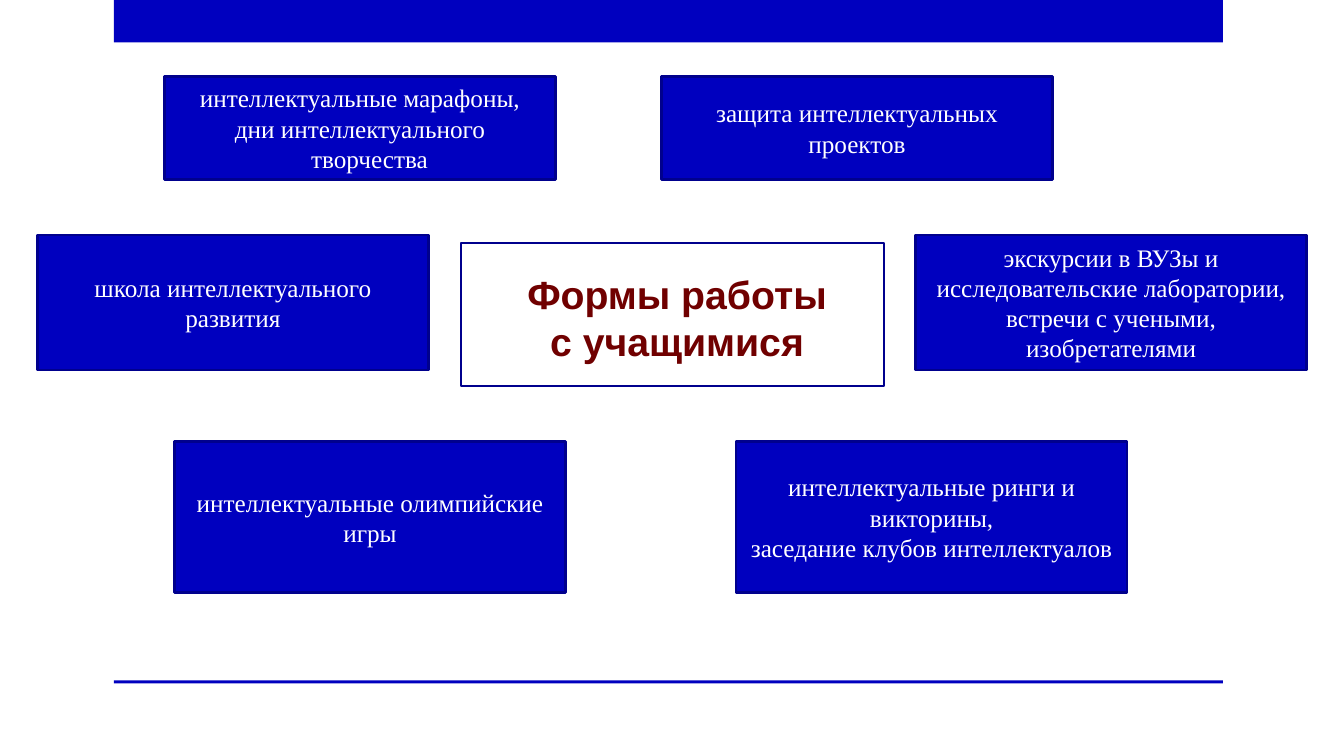
from pptx import Presentation
from pptx import util as u
from pptx.dml.color import RGBColor
from pptx.enum import shapes, text

BLUE, NAVY, WHITE, MAROON = "0000BF", "00008D", "FFFFFF", "700000"


def color(value):
    return RGBColor.from_string(value)


def write(tf, lines, size=18, font="Times New Roman", fill=WHITE, bold=False,
          anchor=text.MSO_ANCHOR.MIDDLE):
    tf.word_wrap = True
    tf.auto_size = text.MSO_AUTO_SIZE.NONE
    tf.vertical_anchor = anchor
    tf.margin_left = tf.margin_right = u.Inches(0.1)
    tf.margin_top = tf.margin_bottom = u.Inches(0.05)
    for i, line in enumerate(lines):
        p = tf.paragraphs[0] if i == 0 else tf.add_paragraph()
        p.text = line
        p.alignment = text.PP_ALIGN.CENTER
        for r in p.runs:
            r.font.size = u.Pt(size)
            r.font.name = font
            r.font.bold = bold
            r.font.color.rgb = color(fill)


prs = Presentation()
prs.slide_width, prs.slide_height = u.Inches(13.33), u.Inches(7.5)
s = prs.slides.add_slide(prs.slide_layouts[5])

boxes = [
    (1.13, 0, 11, 0.42, BLUE, None, []),
    (1.13, 6.75, 11, 0.03, BLUE, None, []),
    (4.57, 2.41, 4.2, 1.42, None, NAVY, []),
    (1.63, 0.76, 3.88, 1.02, BLUE, NAVY,
     ["интеллектуальные марафоны,", "дни интеллектуального\vтворчества"]),
    (1.73, 4.38, 3.88, 1.5, BLUE, NAVY, ["интеллектуальные олимпийские игры"]),
    (0.37, 2.33, 3.88, 1.34, BLUE, NAVY, ["школа интеллектуального развития"]),
    (9.08, 2.33, 3.88, 1.34, BLUE, NAVY,
     ["экскурсии в ВУЗы и исследовательские лаборатории,",
      "встречи с учеными, изобретателями"]),
    (6.56, 0.76, 3.88, 1.02, BLUE, NAVY, ["защита интеллектуальных проектов"]),
    (7.3, 4.38, 3.88, 1.5, BLUE, NAVY,
     ["интеллектуальные ринги и викторины,", "заседание клубов интеллектуалов"]),
]
for x, y, w, h, fill, line, lines in boxes:
    sp = s.shapes.add_shape(shapes.MSO_SHAPE.RECTANGLE, *map(u.Inches, (x, y, w, h)))
    sp.shadow.inherit = False
    if fill:
        sp.fill.solid()
        sp.fill.fore_color.rgb = color(fill)
    else:
        sp.fill.background()
    if line:
        sp.line.color.rgb = color(line)
        sp.line.width = u.Pt(1.75)
    else:
        sp.line.fill.background()
    write(sp.text_frame, lines)
    if "\v" in "".join(lines):
        pPr = sp.text_frame.paragraphs[1]._p.get_or_add_pPr()
        pPr.set("marL", str(u.Inches(0.19)))
        pPr.set("indent", str(u.Inches(-0.19)))

title = s.shapes.title
title.left, title.top, title.width, title.height = map(u.Inches, (4.93, 2.63, 3.57, 1.04))
write(title.text_frame, ["Формы работы", "с учащимися"], size=28, font="Arial",
      fill=MAROON, bold=True, anchor=text.MSO_ANCHOR.TOP)

prs.save("out.pptx")
